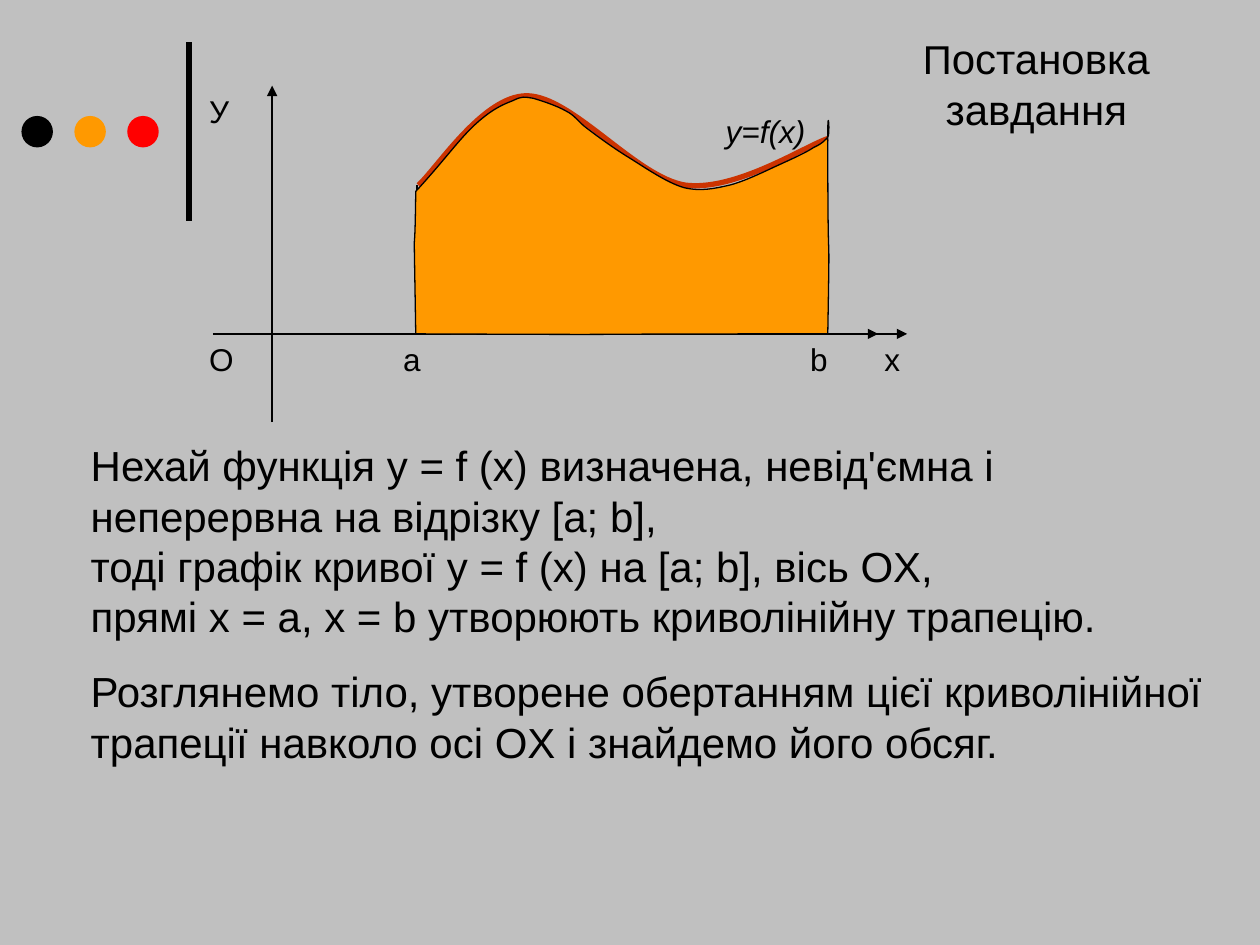
"""Builds a slide that states the problem of rotating a curvilinear trapezoid about the OX axis."""
from dataclasses import dataclass

from lxml import etree
from pptx import Presentation
from pptx.dml.color import RGBColor
from pptx.enum.shapes import MSO_CONNECTOR, MSO_SHAPE
from pptx.enum.text import MSO_ANCHOR, PP_ALIGN
from pptx.oxml.ns import qn
from pptx.util import Inches, Pt

STRAIGHT = MSO_CONNECTOR.STRAIGHT
OVAL = MSO_SHAPE.OVAL
TOP = MSO_ANCHOR.TOP
CENTER = PP_ALIGN.CENTER
LEFT = PP_ALIGN.LEFT


@dataclass(frozen=True)
class Theme:
    background: RGBColor = RGBColor(0xC0, 0xC0, 0xC0)
    ink: RGBColor = RGBColor(0, 0, 0)
    orange: RGBColor = RGBColor(0xFF, 0x99, 0x00)
    red: RGBColor = RGBColor(0xFF, 0, 0)
    curve: RGBColor = RGBColor(0xCC, 0x33, 0x00)
    font: str = "Arial"
    label: Pt = Pt(18)
    initial: Pt = Pt(23)
    body: Pt = Pt(24)
    thin: Pt = Pt(0.75)
    thick: Pt = Pt(3)


theme = Theme()
presentation = Presentation()
presentation.slide_width = Inches(10)
presentation.slide_height = Inches(7.5)
slide = presentation.slides.add_slide(presentation.slide_layouts[6])
slide.background.fill.solid()
slide.background.fill.fore_color.rgb = theme.background


def add_outline(start, segments, close):
    builder = slide.shapes.build_freeform(*map(Inches, start))
    builder.add_line_segments(
        [tuple(map(Inches, segment[-2:])) for segment in segments], close=close)
    shape = builder.convert_to_shape()
    shape.shadow.inherit = False
    for line, segment in zip(list(shape._element.iter(qn("a:lnTo"))), segments):
        if len(segment) == 6:
            line.tag = qn("a:cubicBezTo")
            line.clear()
            for x, y in zip(segment[::2], segment[1::2]):
                etree.SubElement(line, qn("a:pt"), x=str(Inches(x) - shape.left),
                                 y=str(Inches(y) - shape.top))
    return shape


def add_text(box, texts, size, space_before, alignment=LEFT):
    left, top, width, height = box
    right, bottom = left + width, top + height
    shape = add_outline((left, top), [(right, top), (right, bottom), (left, bottom)], True)
    shape.fill.background()
    shape.line.fill.background()
    frame = shape.text_frame
    frame.word_wrap = True
    frame.vertical_anchor = TOP
    frame.margin_left = frame.margin_right = Inches(0.05)
    frame.margin_top = frame.margin_bottom = Inches(0.05)
    for index, text in enumerate(texts):
        paragraph = frame.add_paragraph() if index else frame.paragraphs[0]
        paragraph.text = text
        paragraph.alignment = alignment
        paragraph.space_before = Pt(space_before)
        paragraph.font.name = theme.font
        paragraph.font.size = size
        paragraph.font.color.rgb = theme.ink
    return frame.paragraphs[0]


for index, color in enumerate((theme.ink, theme.orange, theme.red)):
    dot = slide.shapes.add_shape(
        OVAL, Inches(0.17 + 0.42 * index), Inches(0.92), Inches(0.25), Inches(0.25))
    dot.shadow.inherit = False
    dot.fill.solid()
    dot.fill.fore_color.rgb = color
    dot.line.fill.background()

lines = [
    ((1.5, 1.75, 1.5, 0.33), theme.thick, False),
    ((1.69, 2.65, 7.2, 2.65), theme.thin, True),
    ((2.16, 3.35, 2.16, 0.68), theme.thin, True),
    ((6.42, 2.65, 6.97, 2.65), theme.thin, True),
    ((3.31, 1.47, 3.31, 2.65), theme.thin, False),
    ((6.53, 1.15, 6.53, 2.65), theme.thin, False),
]
for ends, width, has_arrow in lines:
    connector = slide.shapes.add_connector(STRAIGHT, *map(Inches, ends))
    connector.line.color.rgb = theme.ink
    connector.line.width = width
    properties = connector._element.spPr
    if has_arrow:
        etree.SubElement(properties.find(qn("a:ln")), qn("a:tailEnd"), type="triangle")
    etree.SubElement(properties, qn("a:effectLst"))

graph = add_outline((6.57, 1.1), [
    (6.39, 1.16, 5.84, 1.52, 5.44, 1.47),
    (5.05, 1.41, 4.54, 0.76, 4.18, 0.76),
    (3.83, 0.76, 3.46, 1.35, 3.32, 1.47),
], close=False)
graph.fill.background()
graph.line.color.rgb = theme.curve
graph.line.width = theme.thick

labels = [
    ("У", 1.61, 0.68, 0.63),
    ("х", 6.97, 2.65, 0.63),
    ("y=f(x)", 5.71, 0.84, 1.42),
    ("O", 1.61, 2.65, 0.63),
    ("a", 3.15, 2.65, 0.63),
    ("b", 6.38, 2.65, 0.63),
]
for text, left, top, width in labels:
    label = add_text((left, top, width, 0.38), [text], theme.label, 10)
    if text == "y=f(x)":
        label.font.italic = True

add_text((0.67, 3.44, 8.98, 2.62), [
    "Нехай функція y = f (x) визначена, невiд'ємна і неперервна на відрізку [a; b], \n"
    "тоді графік кривої у = f (x) на [a; b], вісь OX, \n"
    "прямі x = a, x = b утворюють криволінійну трапецію.",
    "Розглянемо тіло, утворене обертанням цієї криволінійної трапеції "
    "навколо осі OX і знайдемо його обсяг.",
], theme.body, 14)

title = add_text((6.77, 0.21, 2.91, 0.87), ["П"], theme.body, 14, CENTER)
title.runs[0].font.size = theme.initial
title.add_run().text = "остановка завдання"

trapezoid = add_outline((3.3, 1.52), [
    (3.53, 1.27, 3.64, 1.11, 3.77, 0.99),
    (3.9, 0.87, 3.99, 0.83, 4.07, 0.8),
    (4.15, 0.76, 4.16, 0.77, 4.23, 0.78),
    (4.3, 0.8, 4.42, 0.84, 4.49, 0.88),
    (4.57, 0.92, 4.58, 0.96, 4.66, 1.02),
    (4.74, 1.08, 4.86, 1.17, 4.99, 1.25),
    (5.12, 1.33, 5.29, 1.45, 5.43, 1.49),
    (5.56, 1.52, 5.66, 1.5, 5.79, 1.47),
    (5.91, 1.44, 6.07, 1.36, 6.18, 1.31),
    (6.29, 1.26, 6.4, 1.21, 6.46, 1.17),
    (6.53, 1.14, 6.56, 1.1, 6.57, 1.09),
    (6.59, 1.07, 6.57, 0.81, 6.57, 1.07),
    (6.57, 2.51, 6.59, 1.49, 6.57, 2.65),
    (4.08, 2.65, 5.58, 2.66, 3.3, 2.65),
    (3.28, 1.44, 3.29, 2.29, 3.3, 1.52),
], close=True)
trapezoid.fill.solid()
trapezoid.fill.fore_color.rgb = theme.orange
trapezoid.line.color.rgb = theme.ink
trapezoid.line.width = theme.thin

presentation.save("out.pptx")
